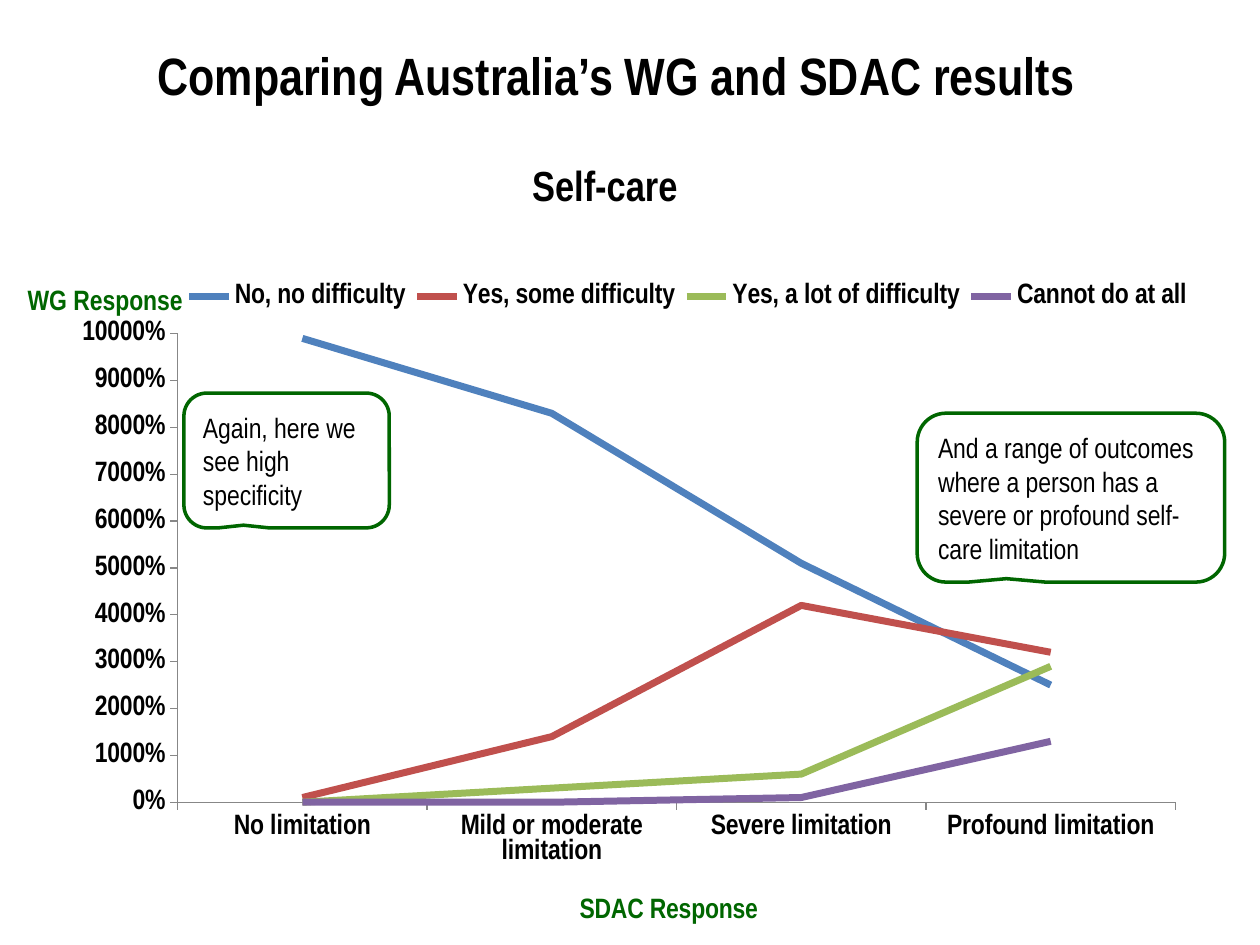
from lxml import etree
from pptx import Presentation
from pptx import util as u
from pptx.chart.data import CategoryChartData
from pptx.dml.color import RGBColor
from pptx.enum import chart as charts, shapes, text
from pptx.oxml import parse_xml
from pptx.oxml.ns import nsdecls, qn

FONT = "Arial Narrow"
COLORS = {"ink": "000000", "green": "006600", "axis": "878787"}

# Content
TITLE = "Comparing Australia’s WG and SDAC results"
SUBTITLE = "Self-care"
VALUE_LABEL, CATEGORY_LABEL = "WG Response", "SDAC Response"
CATEGORIES = ["No limitation", "Mild or moderate limitation",
              "Severe limitation", "Profound limitation"]
SERIES = [
    ("No, no difficulty", (99, 83, 51, 25), "4F81BD"),
    ("Yes, some difficulty", (1, 14, 42, 32), "C0504D"),
    ("Yes, a lot of difficulty", (0, 3, 6, 29), "9BBB59"),
    ("Cannot do at all", (0, 0, 1, 13), "8064A2"),
]
CALLOUTS = [
    ("Again, here we see high specificity", (1.46, 3.12, 1.63, 1.07)),
    ("And a range of outcomes where a person has a severe or profound "
     "self-care limitation", (7.28, 3.28, 2.44, 1.34)),
]


def inches(*lengths):
    return [u.Inches(length) for length in lengths]


def style(font, size, bold=True, color="ink"):
    font.name, font.size, font.bold = FONT, u.Pt(size), bold
    font.color.rgb = RGBColor.from_string(COLORS[color])


def write(frame, words, size, align=text.PP_ALIGN.LEFT, **look):
    frame.text = words
    para = frame.paragraphs[0]
    para.alignment = align
    style(para.runs[0].font, size, **look)


def set_layout(element, x, y, w=None, h=None, inner=False):
    """Place a chart part by fractions of the chart area."""
    for old in element.findall(qn("c:layout")):
        element.remove(old)
    layout = parse_xml(f"<c:layout {nsdecls('c')}><c:manualLayout/></c:layout>")
    parts = [("layoutTarget", "inner")] if inner else []
    parts += [("xMode", "edge"), ("yMode", "edge"), ("x", x), ("y", y)]
    if w:
        parts += [("w", w), ("h", h)]
    for name, value in parts:
        etree.SubElement(layout[0], qn(f"c:{name}")).set("val", str(value))
    before = [child for child in element
              if child.tag in (qn("c:tx"), qn("c:legendPos"))]
    element.insert(len(before), layout)


def add_line_chart(page):
    data = CategoryChartData(number_format="General")
    data.categories = CATEGORIES
    for name, values, _ in SERIES:
        data.add_series(name, values)
    chart = page.shapes.add_chart(charts.XL_CHART_TYPE.LINE,
                                  *inches(0.51, 2.11, 9, 5.39), data).chart
    style(chart.font, 16)
    chart.has_title = False
    chart.plots[0].vary_by_categories = False
    for series, (_, _, color) in zip(chart.plots[0].series, SERIES):
        series.smooth = False
        series.marker.style = charts.XL_MARKER_STYLE.NONE
        series.format.line.width = u.Pt(4)
        series.format.line.color.rgb = RGBColor.from_string(color)

    # Axes
    for axis in (chart.value_axis, chart.category_axis):
        axis.has_major_gridlines = False
        axis.major_tick_mark = charts.XL_TICK_MARK.OUTSIDE
        axis.format.line.width = u.Pt(0.75)
        axis.format.line.color.rgb = RGBColor.from_string(COLORS["axis"])
    scale = chart.value_axis
    scale.minimum_scale, scale.maximum_scale, scale.major_unit = 0, 100, 10
    scale.tick_labels.number_format = "0%"
    scale.tick_labels.number_format_is_linked = False
    title = chart.category_axis.axis_title
    write(title.text_frame, CATEGORY_LABEL, 16,
          text.PP_ALIGN.CENTER, color="green")
    set_layout(title._element, 0.45, 0.92)

    # Legend and plot area
    chart.has_legend = True
    chart.legend.position = charts.XL_LEGEND_POSITION.TOP
    chart.legend.include_in_layout = False
    set_layout(chart.legend._element, 0.1, 0.01, 0.9, 0.07)
    plot_area = chart._chartSpace.chart.plotArea
    set_layout(plot_area, 0.1, 0.1, 0.88, 0.69, inner=True)


def add_callout(page, words, place):
    shape = page.shapes.add_shape(
        shapes.MSO_SHAPE.ROUNDED_RECTANGULAR_CALLOUT, *inches(*place))
    for index, value in enumerate((-0.21, 0.48, 0.17)):
        shape.adjustments[index] = value
    shape.shadow.inherit = False
    shape.fill.background()
    shape.line.width = u.Pt(2)
    shape.line.color.rgb = RGBColor.from_string(COLORS["green"])
    write(shape.text_frame, words, 16, bold=False)
    shape.text_frame.vertical_anchor = text.MSO_ANCHOR.MIDDLE


def main():
    deck = Presentation()
    deck.slide_width, deck.slide_height = inches(10, 7.5)
    page = deck.slides.add_slide(deck.slide_layouts[5])

    # Title
    title = page.shapes.title
    title.left, title.top, title.width, title.height = inches(1.15, 0.29, 8.11, 0.61)
    write(title.text_frame, TITLE, 30)

    # Subtitle table
    table = page.shapes.add_table(1, 1, *inches(3.5, 1.31, 2.6, 0.5)).table
    table.first_row = table.horz_banding = False
    cell = table.cell(0, 0)
    cell.fill.background()
    write(cell.text_frame, SUBTITLE, 24, text.PP_ALIGN.CENTER)

    add_line_chart(page)

    # Value axis label
    box = page.shapes.add_textbox(*inches(0.12, 2.19, 1.65, 0.37))
    box.text_frame.word_wrap = True
    write(box.text_frame, VALUE_LABEL, 16, color="green")

    for words, place in CALLOUTS:
        add_callout(page, words, place)

    deck.save("out.pptx")


if __name__ == "__main__":
    main()
